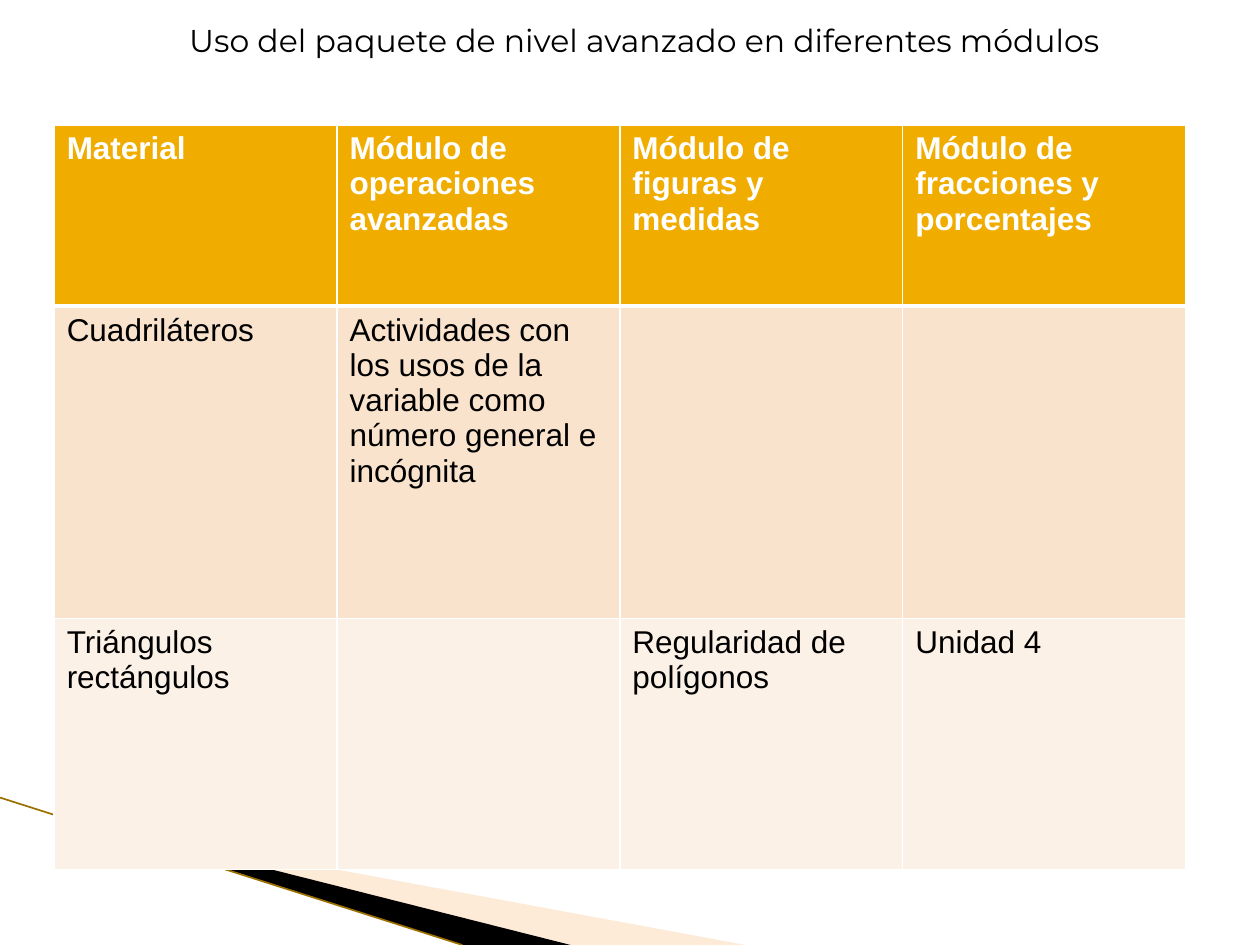
from lxml.etree import SubElement
from pptx import Presentation
from pptx.dml.color import RGBColor
from pptx.enum.text import MSO_ANCHOR, PP_ALIGN
from pptx.oxml import parse_xml
from pptx.oxml.ns import nsdecls, qn
from pptx.util import Inches, Pt

WHITE = RGBColor(0xFF, 0xFF, 0xFF)
BLACK = RGBColor(0, 0, 0)
AMBER = RGBColor(0xF0, 0xAD, 0x00)
PEACH = RGBColor(0xF9, 0xE3, 0xCC)
CREAM = RGBColor(0xFC, 0xF1, 0xE7)
SAND = RGBColor(0xFC, 0xCF, 0x9B)
GOLD = RGBColor(0x9C, 0x70, 0x00)

ROWS = [
    ["Material", "Módulo de operaciones avanzadas",
     "Módulo de figuras y medidas", "Módulo de fracciones y porcentajes"],
    ["Cuadriláteros", "Actividades con los usos de la variable como "
     "número general e incógnita", "", ""],
    ["Triángulos rectángulos", "", "Regularidad de polígonos", "Unidad 4"],
]
FILLS = [AMBER, PEACH, CREAM]
HEIGHTS = [1.44, 2.48, 1.99]


def write(frame, text, font="Arial", size=18, color=BLACK, bold=False,
          align=PP_ALIGN.LEFT):
    para = frame.paragraphs[0]
    para.alignment = align
    run = para.add_run()
    run.text = text
    run.font.name = font
    run.font.size = Pt(size)
    run.font.bold = bold
    run.font.color.rgb = color


def add_wedge(slide, points, color, alpha=100):
    spots = [(Inches(x), Inches(y)) for x, y in points]
    pen = slide.shapes.build_freeform(*spots[0])
    pen.add_line_segments(spots[1:], close=True)
    wedge = pen.convert_to_shape()
    wedge.shadow.inherit = False
    wedge.line.fill.background()
    wedge.fill.solid()
    wedge.fill.fore_color.rgb = color
    if alpha < 100:
        tint = wedge.fill._xPr.find(qn("a:solidFill"))[0]
        SubElement(tint, qn("a:alpha"), val=str(alpha * 1000))


def add_decor(slide, left, top, foot):
    # Two wedges and a thin line that fan out to the foot of the slide
    add_wedge(slide, [(left + 0.55, top + 0.18), (left + 5.92, foot),
                      (left + 4.53, foot)], SAND, alpha=40)
    add_wedge(slide, [(left + 0.53, top + 0.16), (left + 4.53, foot),
                      (left + 3.67, foot)], BLACK)
    line = slide.shapes.add_connector(
        1, Inches(left), Inches(top), Inches(left + 3.67), Inches(foot))
    line.line.color.rgb = GOLD
    line.line.width = Pt(0.95)
    SubElement(line._element.spPr, qn("a:effectLst"))


def add_title(slide, left, top, width, height):
    title = slide.shapes.title
    title.left, title.top = Inches(left), Inches(top)
    title.width, title.height = Inches(width), Inches(height)
    frame = title.text_frame
    frame.word_wrap = True
    frame.vertical_anchor = MSO_ANCHOR.TOP
    write(frame, "Uso del paquete de nivel avanzado en diferentes módulos",
          font="Montserrat", align=PP_ALIGN.CENTER)


def set_edges(cell, top, foot):
    props = cell._tc.get_or_add_tcPr()
    edges = [("lnL", 1), ("lnR", 1), ("lnT", top), ("lnB", foot)]
    for spot, (side, width) in enumerate(edges):
        props.insert(spot, parse_xml(
            f'<a:{side} {nsdecls("a")} w="{Pt(width)}"><a:solidFill>'
            f'<a:srgbClr val="{WHITE}"/></a:solidFill></a:{side}>'))


def add_grid(slide, left, top, width, height):
    grid = slide.shapes.add_table(
        len(ROWS), len(ROWS[0]), Inches(left), Inches(top),
        Inches(width), Inches(height)).table
    for r, texts in enumerate(ROWS):
        grid.rows[r].height = Inches(HEIGHTS[r])
        head = r == 0
        for c, text in enumerate(texts):
            cell = grid.cell(r, c)
            cell.fill.solid()
            cell.fill.fore_color.rgb = FILLS[r]
            # A thick rule parts the header from the body
            set_edges(cell, top=3 if r == 1 else 1, foot=3 if head else 1)
            if text:
                write(cell.text_frame, text, bold=head,
                      color=WHITE if head else BLACK)


def main():
    deck = Presentation()
    deck.slide_width, deck.slide_height = Inches(10), Inches(7.5)
    slide = deck.slides.add_slide(deck.slide_layouts[5])
    add_decor(slide, 0, 6.33, 7.5)
    add_title(slide, 1.14, 0.12, 7.95, 0.71)
    add_grid(slide, 0.43, 0.99, 8.98, sum(HEIGHTS))
    deck.save("out.pptx")


if __name__ == "__main__":
    main()
